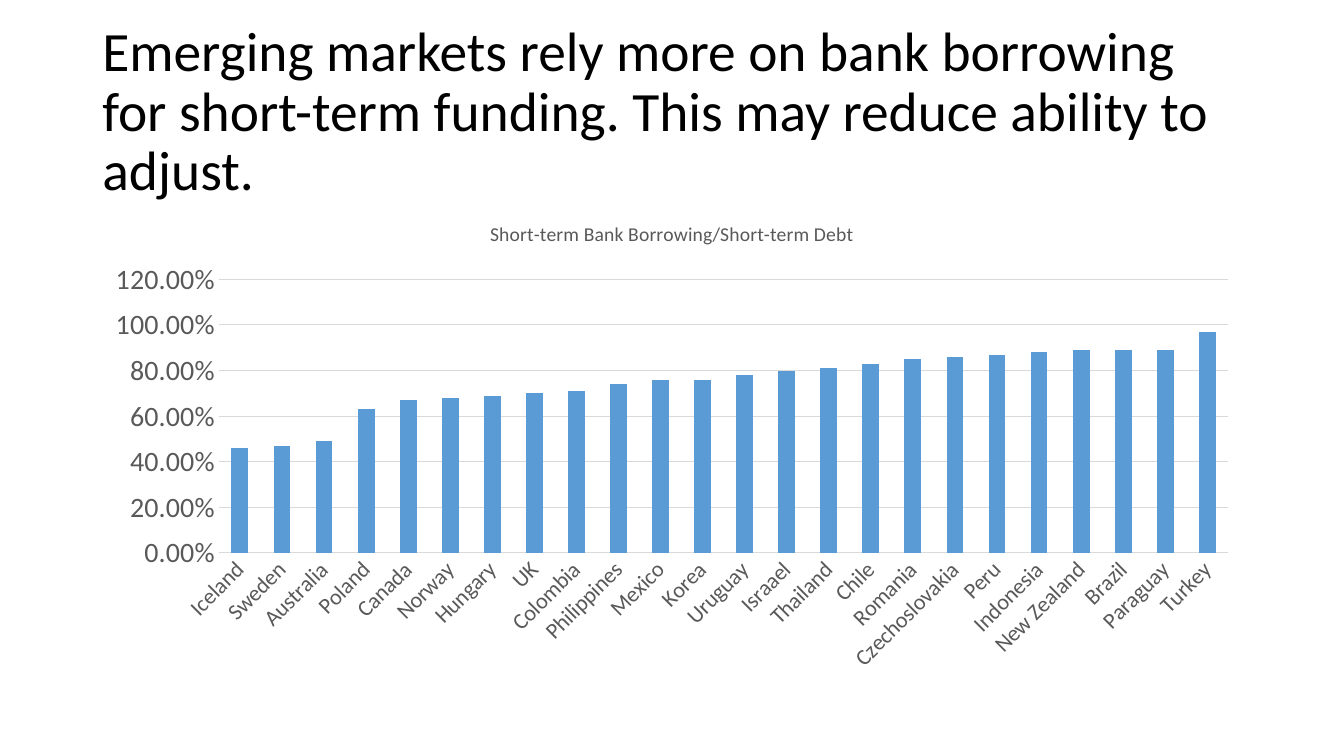
"""Build a slide comparing short-term bank borrowing across countries."""
from typing import NamedTuple

from pptx import Presentation, util as u
from pptx.chart import data as cd
from pptx.dml import color
from pptx.enum import chart as ce, text as te

FONT = "Calibri"
GREY = "595959"
LEFT, WIDTH = u.Cm(2.33), u.Cm(29.21)
HEADLINE = ("Emerging markets rely more on bank borrowing for short-term funding. "
            "This may reduce ability to adjust.")
MEASURE = "Short-term Bank Borrowing/Short-term Debt"


class Share(NamedTuple):
    country: str
    value: float


class AxisStyle(NamedTuple):
    size: float
    rotation: int


SHARES = [
    Share("Iceland", 0.46), Share("Sweden", 0.47), Share("Australia", 0.49),
    Share("Poland", 0.63), Share("Canada", 0.67), Share("Norway", 0.68),
    Share("Hungary", 0.69), Share("UK", 0.7), Share("Colombia", 0.71),
    Share("Philippines", 0.74), Share("Mexico", 0.76), Share("Korea", 0.76),
    Share("Uruguay", 0.78), Share("Israael", 0.8), Share("Thailand", 0.81),
    Share("Chile", 0.83), Share("Romania", 0.85), Share("Czechoslovakia", 0.86),
    Share("Peru", 0.87), Share("Indonesia", 0.88), Share("New Zealand", 0.89),
    Share("Brazil", 0.89), Share("Paraguay", 0.89), Share("Turkey", 0.97),
]
COUNTRY_AXIS = AxisStyle(16, -45)
SHARE_AXIS = AxisStyle(20, 0)


def rgb(value: str) -> color.RGBColor:
    return color.RGBColor.from_string(value)


def style_font(font, size: float, hex_color: str) -> None:
    font.name = FONT
    font.size = u.Pt(size)
    font.bold = False
    font.color.rgb = rgb(hex_color)


def style_axis(axis, style: AxisStyle) -> None:
    axis.major_tick_mark = axis.minor_tick_mark = ce.XL_TICK_MARK.NONE
    axis.format.line.fill.background()
    style_font(axis.tick_labels.font, style.size, GREY)
    axis._element.txPr.bodyPr.set("rot", str(style.rotation * 60000))


def add_headline(s) -> None:
    sp = s.shapes.add_textbox(LEFT, u.Cm(1.01), WIDTH, u.Cm(3.68))
    tf = sp.text_frame
    tf.word_wrap = True
    tf.vertical_anchor = te.MSO_ANCHOR.MIDDLE
    p = tf.paragraphs[0]
    p.line_spacing = 0.9
    r = p.add_run()
    r.text = HEADLINE
    style_font(r.font, 39.6, "000000")


def add_share_chart(s, shares: list[Share]) -> None:
    data = cd.CategoryChartData(number_format="0.00%")
    data.categories = [share.country for share in shares]
    data.add_series(MEASURE, [share.value for share in shares])
    chart = s.shapes.add_chart(ce.XL_CHART_TYPE.COLUMN_CLUSTERED,
                               LEFT, u.Cm(5.08), WIDTH, u.Cm(12.09), data).chart
    style_font(chart.font, 10, "000000")
    chart.has_legend = False
    chart.has_title = True
    r = chart.chart_title.text_frame.paragraphs[0].add_run()
    r.text = MEASURE
    style_font(r.font, 14, GREY)
    chart.chart_title.include_in_layout = False

    plot = chart.plots[0]
    plot.gap_width = 150
    plot.vary_by_categories = False
    fill = plot.series[0].format.fill
    fill.solid()
    fill.fore_color.rgb = rgb("5B9BD5")

    style_axis(chart.category_axis, COUNTRY_AXIS)
    axis = chart.value_axis
    style_axis(axis, SHARE_AXIS)
    axis.minimum_scale, axis.maximum_scale, axis.major_unit = 0, 1.2, 0.2
    axis.tick_labels.number_format = "0.00%"
    axis.tick_labels.number_format_is_linked = False
    line = axis.major_gridlines.format.line
    line.color.rgb = rgb("D9D9D9")
    line.width = u.Pt(0.75)


def main() -> None:
    prs = Presentation()
    prs.slide_width, prs.slide_height = u.Cm(33.87), u.Cm(19.05)
    s = prs.slides.add_slide(prs.slide_layouts[6])
    add_headline(s)
    add_share_chart(s, SHARES)
    prs.save("out.pptx")


if __name__ == "__main__":
    main()
